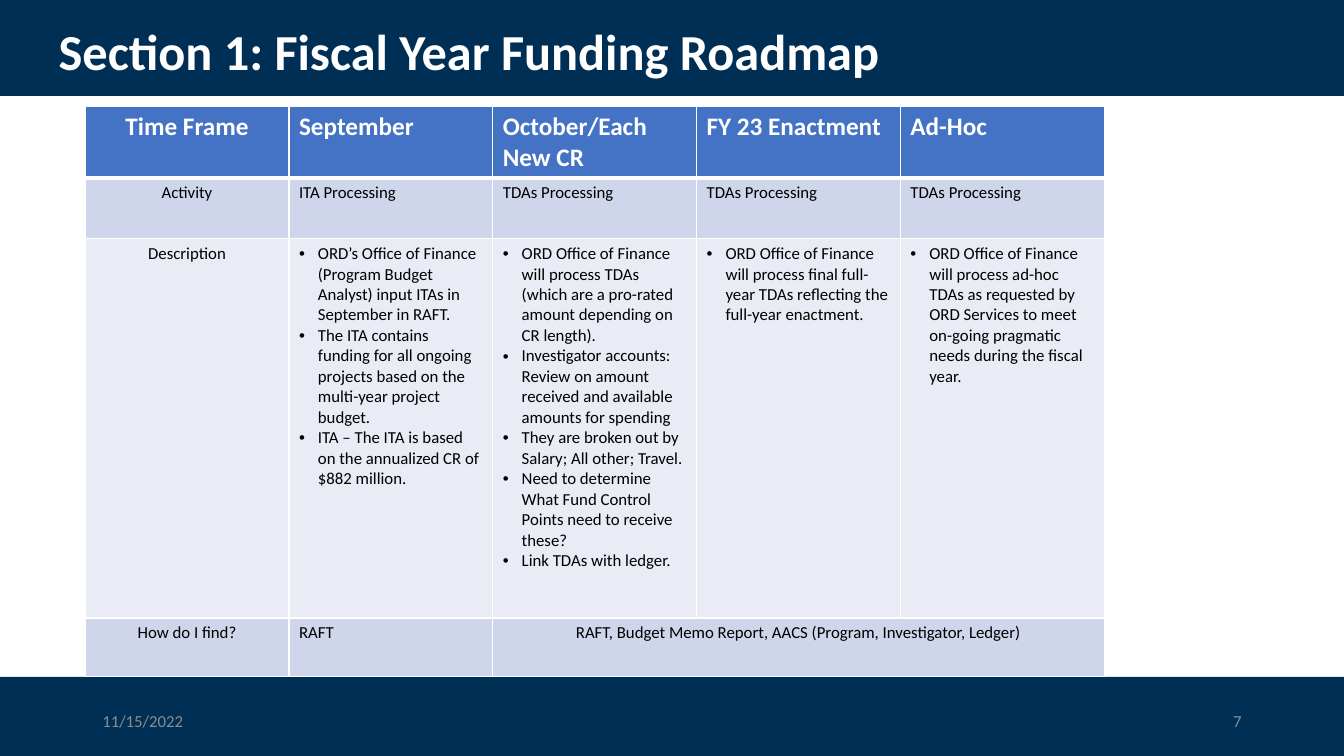
from lxml import etree
from pptx import Presentation
from pptx.dml.color import RGBColor
from pptx.enum.shapes import MSO_SHAPE
from pptx.enum.text import MSO_ANCHOR, PP_ALIGN
from pptx.oxml.ns import qn
from pptx.util import Pt

RECTANGLE = MSO_SHAPE.RECTANGLE
TOP, MIDDLE = MSO_ANCHOR.TOP, MSO_ANCHOR.MIDDLE
LEFT, CENTER, RIGHT = PP_ALIGN.LEFT, PP_ALIGN.CENTER, PP_ALIGN.RIGHT

FONT = "Calibri"
NAVY, WHITE, BLACK, GRAY = "002F56", "FFFFFF", "000000", "8C8C8C"
HEADER_BLUE, BAND_DARK, BAND_LIGHT = "4472C4", "CFD5EA", "E9EBF5"
WIDTH, HEIGHT = 960, 540

ROADMAP = [
    ["Time Frame", "September", "October/Each New CR", "FY 23 Enactment", "Ad-Hoc"],
    ["Activity", "ITA Processing", "TDAs Processing", "TDAs Processing", "TDAs Processing"],
    [
        "Description",
        [
            "ORD’s Office of Finance (Program Budget Analyst) input ITAs in September in RAFT.",
            "The ITA contains funding for all ongoing projects based on the multi-year project budget.",
            "ITA – The ITA is based on the annualized CR of $882 million.",
        ],
        [
            "ORD Office of Finance will process TDAs (which are a pro-rated amount depending on CR length).",
            "Investigator accounts: Review on amount received and available amounts for spending",
            "They are broken out by Salary; All other; Travel.",
            "Need to determine What Fund Control Points need to receive these?",
            "Link TDAs with ledger.",
        ],
        ["ORD Office of Finance will process final full-year TDAs reflecting the full-year enactment."],
        [
            "ORD Office of Finance will process ad-hoc TDAs as requested by ORD Services "
            "to meet on-going pragmatic needs during the fiscal year."
        ],
    ],
    ["How do I find?", "RAFT", "RAFT, Budget Memo Report, AACS (Program, Investigator, Ledger)", "", ""],
]
ROW_FILLS = [HEADER_BLUE, BAND_DARK, BAND_LIGHT, BAND_DARK]
ROW_HEIGHTS = [51, 43.5, 271, 42]
COLUMN_WIDTH = 145.6
SHARED_ROW, SHARED_COLUMN = 3, 2


def color(code):
    return RGBColor.from_string(code)


class Deck:
    def __init__(self):
        self.presentation = Presentation()
        self.presentation.slide_width = Pt(WIDTH)
        self.presentation.slide_height = Pt(HEIGHT)
        self.slide = self.presentation.slides.add_slide(self.presentation.slide_layouts[6])

    def band(self, top, height):
        band = self.slide.shapes.add_shape(RECTANGLE, 0, Pt(top), Pt(WIDTH), Pt(height))
        band.shadow.inherit = False
        band.fill.solid()
        band.fill.fore_color.rgb = color(NAVY)
        band.line.fill.background()

    def set_lines(self, frame, lines, size, code, bold=False, align=LEFT, bulleted=False):
        for index, line in enumerate(lines):
            paragraph = frame.paragraphs[0] if index == 0 else frame.add_paragraph()
            paragraph.text = line
            paragraph.alignment = align
            if bulleted:
                self.bullet(paragraph)
            paragraph.font.name = FONT
            paragraph.font.size = Pt(size)
            paragraph.font.bold = bold
            paragraph.font.color.rgb = color(code)

    def bullet(self, paragraph):
        properties = paragraph._p.get_or_add_pPr()
        properties.set("marL", str(Pt(13.5)))
        properties.set("indent", str(-Pt(13.5)))
        etree.SubElement(properties, qn("a:buFont"), typeface="Arial")
        etree.SubElement(properties, qn("a:buChar"), char="•")

    def label(self, text, left, top, width, height, size, code, bold=False, align=LEFT, anchor=MIDDLE):
        box = self.slide.shapes.add_textbox(Pt(left), Pt(top), Pt(width), Pt(height))
        box.text_frame.word_wrap = True
        box.text_frame.vertical_anchor = anchor
        self.set_lines(box.text_frame, [text], size, code, bold, align)

    def borders(self, cell, top, bottom):
        properties = cell._tc.get_or_add_tcPr()
        for side, weight in (("L", 1), ("R", 1), ("T", top), ("B", bottom)):
            line = etree.SubElement(properties, qn(f"a:ln{side}"), w=str(Pt(weight)))
            fill = etree.SubElement(line, qn("a:solidFill"))
            etree.SubElement(fill, qn("a:srgbClr"), val=WHITE)

    def roadmap(self, left, top):
        columns = len(ROADMAP[0])
        table = self.slide.shapes.add_table(
            len(ROADMAP), columns, Pt(left), Pt(top), Pt(COLUMN_WIDTH * columns), Pt(sum(ROW_HEIGHTS))
        ).table
        table.horz_banding = False
        for column in table.columns:
            column.width = Pt(COLUMN_WIDTH)
        for row, contents in enumerate(ROADMAP):
            table.rows[row].height = Pt(ROW_HEIGHTS[row])
            header = row == 0
            for column, content in enumerate(contents):
                cell = table.cell(row, column)
                self.borders(cell, 3 if row == 1 else 1, 3 if header else 1)
                cell.fill.solid()
                cell.fill.fore_color.rgb = color(ROW_FILLS[row])
                bulleted = isinstance(content, list)
                centered = column == 0 or (row, column) == (SHARED_ROW, SHARED_COLUMN)
                self.set_lines(
                    cell.text_frame,
                    content if bulleted else [content],
                    18 if header else 12,
                    WHITE if header else BLACK,
                    header,
                    CENTER if centered else LEFT,
                    bulleted,
                )
        table.cell(SHARED_ROW, SHARED_COLUMN).merge(table.cell(SHARED_ROW, columns - 1))


def main():
    deck = Deck()
    deck.band(0, 68.5)
    deck.band(483.5, 56.5)
    deck.label("7", 678, 500.5, 216, 28.8, 12, GRAY, align=RIGHT)
    deck.roadmap(60.8, 75.9)
    deck.label("Section 1: Fiscal Year Funding Roadmap", 34.8, 10.8, 624, 51, 36, WHITE, bold=True, anchor=TOP)
    deck.label("11/15/2022", 66, 500.5, 216, 28.8, 12, GRAY)
    deck.presentation.save("out.pptx")


if __name__ == "__main__":
    main()
